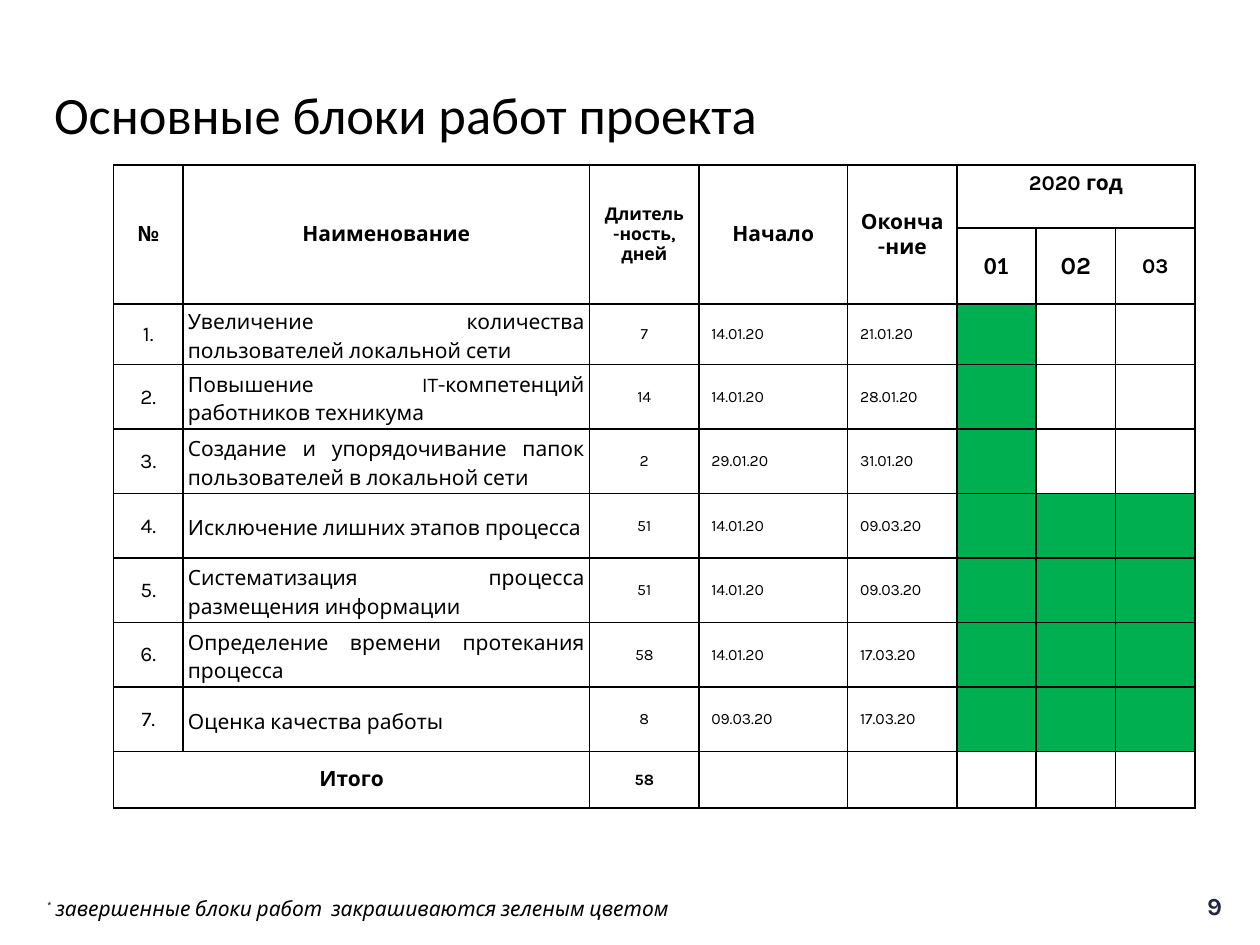
"""Build the slide with the table of project work blocks."""
import lxml.etree
import pptx
import pptx.dml.color
import pptx.enum.text
import pptx.oxml.ns
import pptx.util

Cm = pptx.util.Cm
Pt = pptx.util.Pt
ALIGN = pptx.enum.text.PP_ALIGN
ANCHOR = pptx.enum.text.MSO_ANCHOR
COLORS = {"ink": "000000", "done": "00B050", "open": "FFFFFF", "page": "23263C"}

COLS = [1.4, 8.2, 2.2, 3, 2.2] + [1.6] * 3
ROWS = [1.27, 1.47, 1.22] + [1.3] * 6 + [1.14]
HEADS = [("№", 12), ("Наименование", 12), ("Длитель-ность, дней", 10),
         ("Начало", 12), ("Оконча -ние", 12)]
MONTHS = [("01", 14, "Calibri"), ("02", 14, "Karla"), ("03", 12, "Karla")]
TASKS = [
    ("Увеличение  количества пользователей локальной сети", "7", "14.01.20", "21.01.20", 1),
    ("Повышение IT-компетенций работников техникума", "14", "14.01.20", "28.01.20", 1),
    ("Создание и упорядочивание папок пользователей в локальной сети",
     "2", "29.01.20", "31.01.20", 1),
    ("Исключение лишних этапов процесса", "51", "14.01.20", "09.03.20", 3),
    ("Систематизация процесса размещения информации", "51", "14.01.20", "09.03.20", 3),
    ("Определение времени протекания процесса", "58", "14.01.20", "17.03.20", 3),
    ("Оценка качества работы", "8", "09.03.20", "17.03.20", 3),
]


def rgb(name):
    return pptx.dml.color.RGBColor.from_string(COLORS[name])


def write(frame, text, size=12, font="Karla", color="ink", bold=False,
          italic=False, align=ALIGN.LEFT, space=None, base=0):
    """Add a formatted run to the first paragraph of a frame."""
    para = frame.paragraphs[0]
    para.alignment = align
    if space:
        para.line_spacing = space
    run = para.add_run()
    run.text = text
    run.font.size = Pt(size)
    run.font.name = font
    run.font.bold = bold
    run.font.italic = italic
    run.font.color.rgb = rgb(color)
    if base:
        run.font._element.set("baseline", str(base * 1000))


class Deck:
    """Hold the style and the current slide."""

    def __init__(self):
        self.show = pptx.Presentation()
        self.show.slide_width = Cm(25.4)
        self.show.slide_height = Cm(19.05)
        self.slide = self.show.slides.add_slide(self.show.slide_layouts[6])
        self.line = Pt(1)

    def box(self, left, top, width, height, anchor=ANCHOR.MIDDLE):
        """Add a text box and return its frame."""
        shape = self.slide.shapes.add_textbox(Cm(left), Cm(top), Cm(width), Cm(height))
        frame = shape.text_frame
        frame.word_wrap = True
        frame.vertical_anchor = anchor
        return frame

    def table(self, left, top, cols, rows):
        """Add a plain ruled table."""
        shape = self.slide.shapes.add_table(len(rows), len(cols), Cm(left), Cm(top),
                                            Cm(sum(cols)), Cm(sum(rows)))
        grid = shape.table
        grid.first_row = grid.horz_banding = False
        for col, width in zip(grid.columns, cols):
            col.width = Cm(width)
        for row, height in zip(grid.rows, rows):
            row.height = Cm(height)
        for cell in grid.iter_cells():
            cell.fill.background()
            self.edge(cell)
        return grid

    def edge(self, cell):
        """Draw the four borders of a cell."""
        name = pptx.oxml.ns.qn
        props = cell._tc.get_or_add_tcPr()
        for spot, side in enumerate("LRTB"):
            line = lxml.etree.Element(name("a:ln" + side), w=str(self.line))
            fill = lxml.etree.SubElement(line, name("a:solidFill"))
            lxml.etree.SubElement(fill, name("a:srgbClr"), val=COLORS["ink"])
            props.insert(spot, line)

    def cell(self, cell, text, pad=(0.25, 0.13, 0.13), anchor=ANCHOR.MIDDLE, **style):
        """Write a cell with side, top and bottom padding."""
        cell.margin_left = cell.margin_right = Cm(pad[0])
        cell.margin_top, cell.margin_bottom = Cm(pad[1]), Cm(pad[2])
        cell.vertical_anchor = anchor
        write(cell.text_frame, text, **style)

    def paint(self, cell, color):
        """Fill a cell."""
        cell.fill.solid()
        cell.fill.fore_color.rgb = rgb(color)


def main():
    deck = Deck()
    write(deck.box(0.84, 1.19, 24.13, 2.34), "Основные блоки работ проекта",
          size=30, font="Calibri", space=0.9)

    grid = deck.table(2.29, 3.33, COLS, ROWS)
    head = {"bold": True, "align": ALIGN.CENTER}
    for col, (text, size) in enumerate(HEADS):
        grid.cell(0, col).merge(grid.cell(1, col))
        deck.cell(grid.cell(0, col), text, size=size, **head)
    first = len(HEADS)
    grid.cell(0, first).merge(grid.cell(0, first + 2))
    deck.cell(grid.cell(0, first), "2020 год", anchor=ANCHOR.TOP, **head)
    for col, (text, size, font) in enumerate(MONTHS, first):
        deck.cell(grid.cell(1, col), text, pad=(0.1, 0.13, 0.13),
                  size=size, font=font, **head)

    for num, (name, days, start, end, done) in enumerate(TASKS, 1):
        row = num + 1
        deck.cell(grid.cell(row, 0), f"{num}.", align=ALIGN.CENTER)
        deck.cell(grid.cell(row, 1), name, pad=(0.1, 0.03, 0),
                  align=ALIGN.JUSTIFY, space=1.15)
        deck.cell(grid.cell(row, 2), days, size=9, align=ALIGN.CENTER)
        for col, date in enumerate((start, end), 3):
            deck.cell(grid.cell(row, col), date, size=9)
        for month in range(3):
            deck.paint(grid.cell(row, first + month), "done" if month < done else "open")

    last = len(ROWS) - 1
    grid.cell(last, 0).merge(grid.cell(last, 1))
    deck.cell(grid.cell(last, 0), "Итого", **head)
    deck.cell(grid.cell(last, 2), "58", size=9, **head)
    for col in range(first, len(COLS)):
        deck.paint(grid.cell(last, col), "open")

    write(deck.box(24, 17.86, 0.97, 0.79), "9", size=14, color="page", **head)
    note = deck.box(0.69, 17.93, 21.62, 0.76, anchor=ANCHOR.TOP)
    write(note, "*", italic=True, base=30)
    write(note, " завершенные блоки работ  закрашиваются зеленым цветом", italic=True)
    deck.show.save("out.pptx")


if __name__ == "__main__":
    main()
